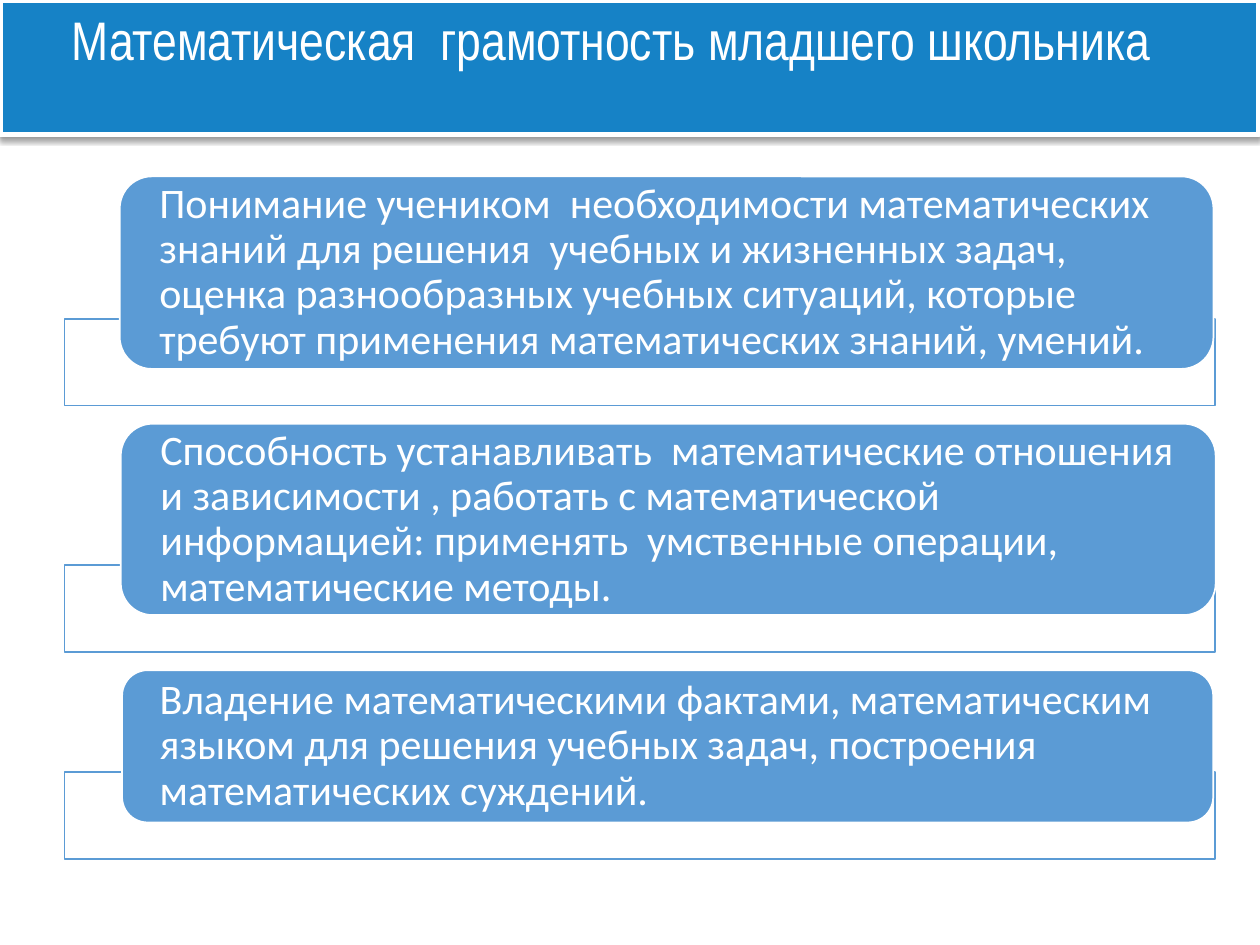
from lxml import etree
from pptx import Presentation
from pptx.dml.color import RGBColor
from pptx.enum.shapes import MSO_SHAPE
from pptx.enum.text import MSO_ANCHOR, MSO_AUTO_SIZE, PP_ALIGN
from pptx.oxml.ns import qn
from pptx.util import Pt

RECTANGLE, ROUNDED = MSO_SHAPE.RECTANGLE, MSO_SHAPE.ROUNDED_RECTANGLE
TOP, MIDDLE = MSO_ANCHOR.TOP, MSO_ANCHOR.MIDDLE
LEFT, CENTER = PP_ALIGN.LEFT, PP_ALIGN.CENTER
WHITE = RGBColor(0xFF, 0xFF, 0xFF)
BANNER_BLUE = RGBColor(0x16, 0x82, 0xC6)
CARD_BLUE = RGBColor(0x5B, 0x9B, 0xD5)

# Content
TITLE = "Математическая  грамотность младшего школьника "
# Card text, then left, top, width and height of the card
CARDS = [
    ("Понимание учеником  необходимости математических знаний для решения  "
     "учебных и жизненных задач, оценка разнообразных учебных ситуаций, которые "
     "требуют применения математических знаний, умений.",
     (68.4, 100.8, 625, 110)),
    ("Способность устанавливать  математические отношения и зависимости , "
     "работать с математической информацией: применять  умственные операции,  "
     "математические методы.",
     (69, 242.1, 625.7, 109.4)),
    ("Владение математическими фактами, математическим языком для решения "
     "учебных задач, построения математических суждений.",
     (69.8, 383, 623.5, 87)),
]
FRAME_LEFT, FRAME_WIDTH, FRAME_HEIGHT = 36.8, 657.5, 49.7
FRAME_DROP = 21  # how far a frame reaches below its card


def add_block(page, kind, place, fill, line, line_width):
    block = page.shapes.add_shape(kind, *(Pt(length) for length in place))
    block.shadow.inherit = False
    block.fill.solid()
    block.fill.fore_color.rgb = fill
    block.line.color.rgb = line
    block.line.width = Pt(line_width)
    return block


def write(box, text, font_name, size, align, anchor, side, edge):
    frame = box.text_frame
    frame.word_wrap = True
    frame.auto_size = MSO_AUTO_SIZE.NONE
    frame.vertical_anchor = anchor
    frame.margin_left = frame.margin_right = Pt(side)
    frame.margin_top = frame.margin_bottom = Pt(edge)
    para = frame.paragraphs[0]
    para.text = text
    para.alignment = align
    para.font.name = font_name
    para.font.size = Pt(size)
    para.font.color.rgb = WHITE
    return para


def add_bottom_shadow(block):
    effects = block.element.spPr.find(qn("a:effectLst"))
    shadow = etree.SubElement(effects, qn("a:outerShdw"), blurRad=str(Pt(3)),
                              dist=str(Pt(1.6)), dir="5400000", rotWithShape="0")
    color = etree.SubElement(shadow, qn("a:srgbClr"), val="000000")
    etree.SubElement(color, qn("a:alpha"), val="38000")


deck = Presentation()
deck.slide_width, deck.slide_height = Pt(720), Pt(540)
page = deck.slides.add_slide(deck.slide_layouts[5])

# Banner, placed behind the title
title = page.shapes.title
banner = add_block(page, RECTANGLE, (0, 0, 719.5, 77), BANNER_BLUE, WHITE, 3)
add_bottom_shadow(banner)
title.element.addprevious(banner.element)
title.left, title.top, title.width, title.height = Pt(0), Pt(0), Pt(705.6), Pt(82)
write(title, TITLE, "Arial Narrow", 31, CENTER, TOP, 7.2, 3.6)

# Cards, each over an outlined frame
for text, place in CARDS:
    bottom = place[1] + place[3]
    frame_top = bottom + FRAME_DROP - FRAME_HEIGHT
    add_block(page, RECTANGLE, (FRAME_LEFT, frame_top, FRAME_WIDTH, FRAME_HEIGHT),
              WHITE, CARD_BLUE, 1)
    card = add_block(page, ROUNDED, place, CARD_BLUE, WHITE, 1)
    para = write(card, text, "Calibri", 24, LEFT, MIDDLE, 17.3, 0)
    para.line_spacing = 0.9

deck.save("out.pptx")
